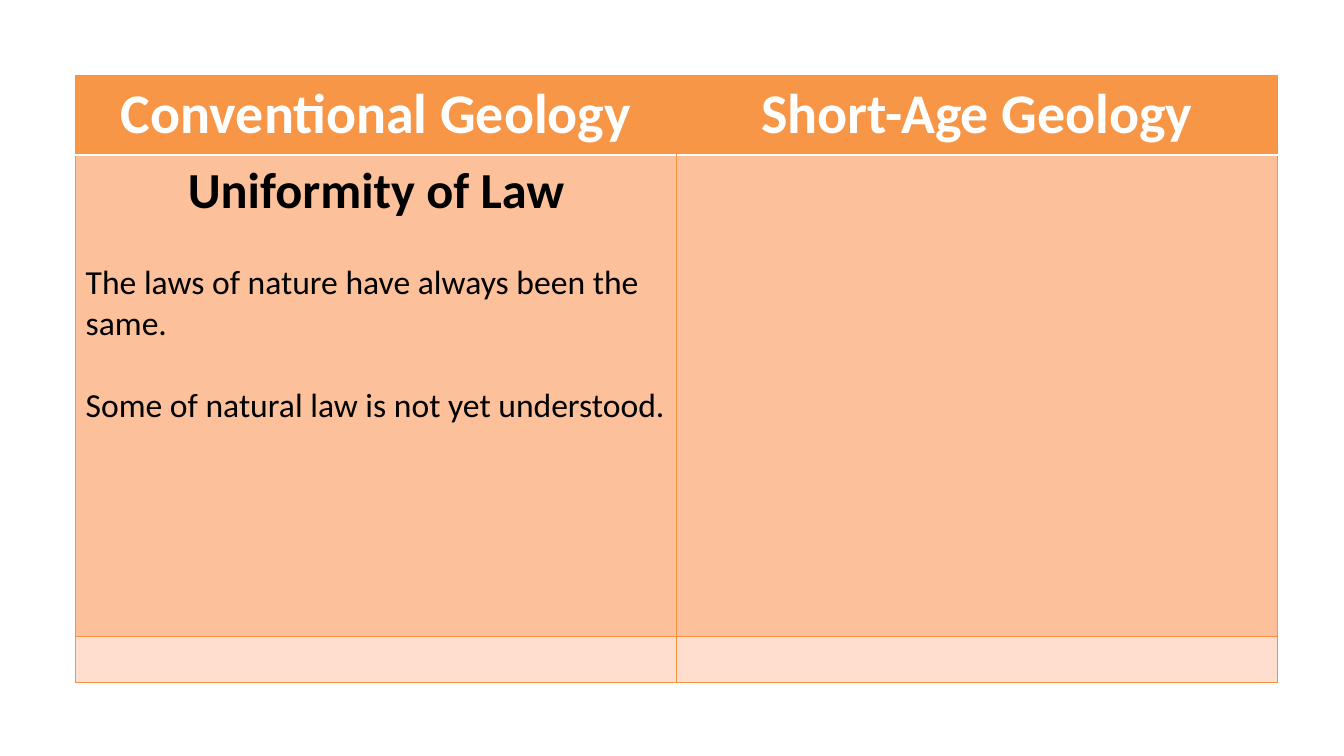
from lxml import etree
from pptx import Presentation
from pptx.dml.color import RGBColor
from pptx.enum.text import PP_ALIGN
from pptx.oxml.ns import qn
from pptx.util import Inches, Pt

CENTER, LEFT = PP_ALIGN.CENTER, PP_ALIGN.LEFT
FONT = "Calibri"
ORANGE, WHITE, BLACK = "F69240", "FFFFFF", "000000"
ROW_FILLS = ["F79646", "FCC19A", "FFDDCF"]
ROW_HEIGHTS = [0.79, 4.77, 0.46]
COLUMN_WIDTH = 5.96
TABLE_LEFT, TABLE_TOP = 0.75, 0.75
BLANK_LINE = 29.3

HEADER = {"size": 40, "color": WHITE, "bold": True, "align": CENTER, "before": 0}
HEADING = {"size": 36, "color": BLACK, "bold": True, "align": CENTER, "before": 0}
BODY = {"size": 24, "color": BLACK, "bold": False, "align": LEFT, "before": BLANK_LINE}

ROWS = [
    [[("Conventional Geology", HEADER)], [("Short-Age Geology", HEADER)]],
    [
        [
            ("Uniformity of Law", HEADING),
            ("The laws of nature have always been the same.", BODY),
            ("Some of natural law is not yet understood.", BODY),
        ],
        [],
    ],
    [[], []],
]


def rgb(color):
    return RGBColor.from_string(color)


def write_cell(cell, lines):
    for index, (text, style) in enumerate(lines):
        frame = cell.text_frame
        para = frame.paragraphs[0] if index == 0 else frame.add_paragraph()
        para.alignment = style["align"]
        para.space_before = Pt(style["before"])
        span = para.add_run()
        span.text = text
        span.font.name = FONT
        span.font.size = Pt(style["size"])
        span.font.bold = style["bold"]
        span.font.color.rgb = rgb(style["color"])


def set_borders(cell, borders):
    properties = cell._tc.get_or_add_tcPr()
    for index, (side, color, width) in enumerate(borders):
        line = etree.Element(qn(f"a:ln{side}"), w=str(Pt(width)))
        if color:
            fill = etree.SubElement(line, qn("a:solidFill"))
            etree.SubElement(fill, qn("a:srgbClr"), val=color)
        else:
            etree.SubElement(line, qn("a:noFill"))
        properties.insert(index, line)


def cell_borders(row, column):
    thin, divider, none = (ORANGE, 0.75), (WHITE, 2), (None, 0)
    inner = none if row == 0 else thin
    return [
        ("L", *(thin if column == 0 else inner)),
        ("R", *(thin if column == 1 else inner)),
        ("T", *(divider if row == 1 else thin)),
        ("B", *(divider if row == 0 else thin)),
    ]


def main():
    deck = Presentation()
    deck.slide_width, deck.slide_height = Inches(13.33), Inches(7.5)
    page = deck.slides.add_slide(deck.slide_layouts[6])
    table = page.shapes.add_table(
        len(ROWS), 2, Inches(TABLE_LEFT), Inches(TABLE_TOP),
        Inches(2 * COLUMN_WIDTH), Inches(sum(ROW_HEIGHTS)),
    ).table
    for column in table.columns:
        column.width = Inches(COLUMN_WIDTH)
    for row, cells in enumerate(ROWS):
        table.rows[row].height = Inches(ROW_HEIGHTS[row])
        for column, lines in enumerate(cells):
            cell = table.cell(row, column)
            cell.fill.solid()
            cell.fill.fore_color.rgb = rgb(ROW_FILLS[row])
            set_borders(cell, cell_borders(row, column))
            write_cell(cell, lines)
    deck.save("out.pptx")


if __name__ == "__main__":
    main()
